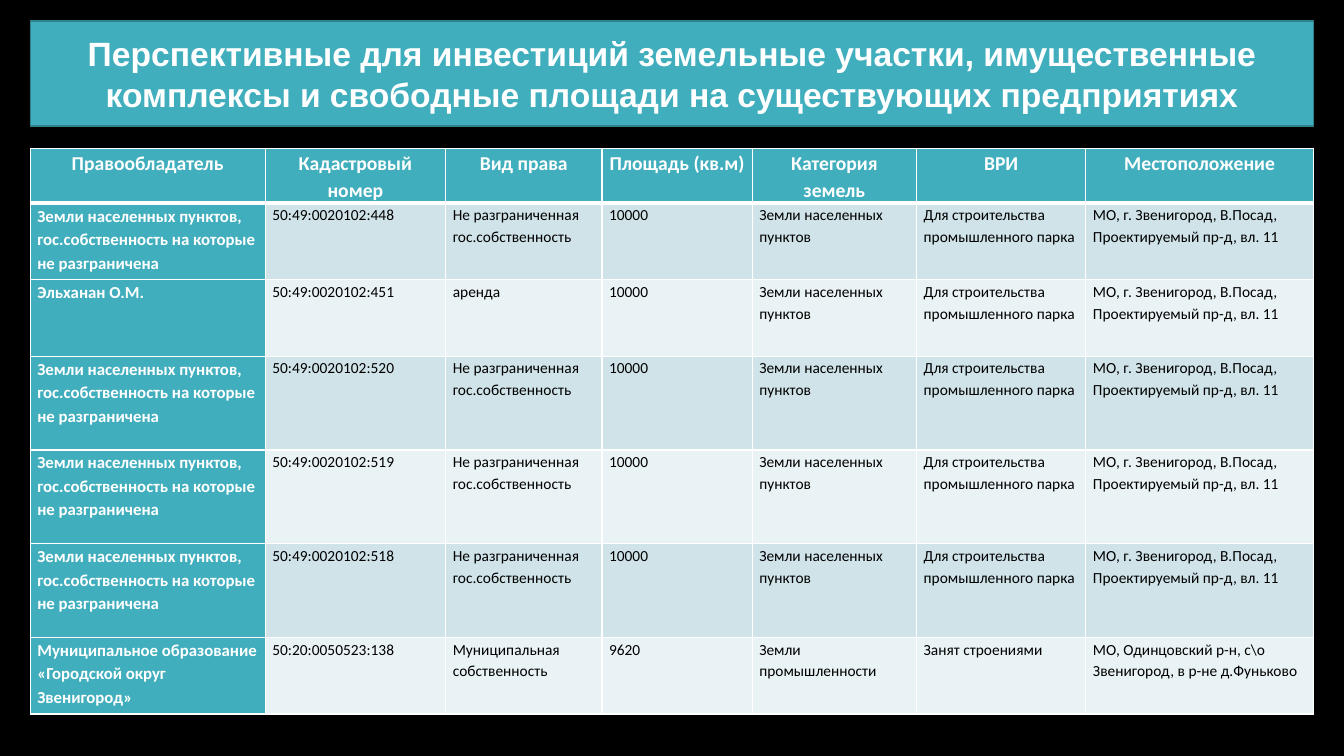
from lxml.etree import SubElement
from pptx import Presentation
from pptx.dml.color import RGBColor
from pptx.enum.shapes import MSO_SHAPE
from pptx.enum.text import MSO_ANCHOR, PP_ALIGN
from pptx.oxml.ns import qn
from pptx.util import Inches, Pt

BLACK = RGBColor(0x00, 0x00, 0x00)
WHITE = RGBColor(0xFF, 0xFF, 0xFF)
TEAL = RGBColor(0x41, 0xAE, 0xBD)
DARK_TEAL = RGBColor(0x30, 0x81, 0x8C)
BAND_DARK = RGBColor(0xCF, 0xE3, 0xE8)
BAND_LIGHT = RGBColor(0xE9, 0xF2, 0xF4)

TITLE = ("Перспективные для инвестиций земельные участки, имущественные "
         "комплексы и свободные площади на существующих предприятиях")
HEADINGS = ("Правообладатель", "Кадастровый номер", "Вид права", "Площадь (кв.м)",
            "Категория земель", "ВРИ", "Местоположение")

# Values shared by several plots
STATE_OWNER = "Земли населенных пунктов, гос.собственность на которые не разграничена"
STATE_RIGHT = "Не разграниченная гос.собственность"
PARK_PLOT = ("10000", "Земли населенных пунктов", "Для строительства промышленного парка",
             "МО, г. Звенигород, В.Посад, Проектируемый пр-д, вл. 11")
PLOTS = (
    (STATE_OWNER, "50:49:0020102:448", STATE_RIGHT, *PARK_PLOT),
    ("Эльханан О.М.", "50:49:0020102:451", "аренда", *PARK_PLOT),
    (STATE_OWNER, "50:49:0020102:520", STATE_RIGHT, *PARK_PLOT),
    (STATE_OWNER, "50:49:0020102:519", STATE_RIGHT, *PARK_PLOT),
    (STATE_OWNER, "50:49:0020102:518", STATE_RIGHT, *PARK_PLOT),
    ("Муниципальное образование «Городской округ Звенигород»", "50:20:0050523:138",
     "Муниципальная собственность", "9620", "Земли промышленности", "Занят строениями",
     "МО, Одинцовский р-н, с\\о Звенигород, в р-не д.Фуньково"),
)

# Shares of the slide, in percent of its width or height
LEFT, WIDTH = 2.25, 95.5
COLUMN_SHARES = (17.48, 13.43, 11.63, 11.18, 12.23, 12.6, 16.95)
ROW_SHARES = (6.53, 10.13, 10.13, 12.4, 12.4, 12.4, 10.13)
CELL_MARGIN = 0.53


def write(frame, text, *, size, font="Calibri", color=BLACK, bold=False,
          align=PP_ALIGN.LEFT, spacing=None):
    paragraph = frame.paragraphs[0]
    paragraph.alignment = align
    paragraph.line_spacing = spacing
    run = paragraph.add_run()
    run.text = text
    run.font.name, run.font.size = font, Pt(size)
    run.font.bold, run.font.color.rgb = bold, color


class PlotSlide:
    """Holds the slide and its style; lengths are percent shares."""

    def __init__(self, deck):
        self.deck = deck
        self.slide = deck.slides.add_slide(deck.slide_layouts[6])
        background = self.slide.background.fill
        background.solid()
        background.fore_color.rgb = BLACK

    def across(self, share):
        return round(self.deck.slide_width * share / 100)

    def down(self, share):
        return round(self.deck.slide_height * share / 100)

    def banner(self, text, top, height):
        banner = self.slide.shapes.add_shape(
            MSO_SHAPE.RECTANGLE, self.across(LEFT), self.down(top),
            self.across(WIDTH), self.down(height))
        banner.shadow.inherit = False
        banner.fill.solid()
        banner.fill.fore_color.rgb = TEAL
        banner.line.color.rgb = DARK_TEAL
        banner.line.width = Pt(1)
        banner.text_frame.word_wrap = True
        banner.text_frame.vertical_anchor = MSO_ANCHOR.MIDDLE
        write(banner.text_frame, text, size=24, font="Arial", color=WHITE,
              bold=True, align=PP_ALIGN.CENTER)

    def borders(self, cell, **widths):
        properties = cell._tc.get_or_add_tcPr()
        for side in "LRTB":
            line = SubElement(properties, qn(f"a:ln{side}"), w=str(Pt(widths.get(side, 1))))
            fill = SubElement(line, qn("a:solidFill"))
            SubElement(fill, qn("a:srgbClr"), val=str(WHITE))

    def cell(self, cell, text, row, column):
        cell.margin_left = cell.margin_right = self.across(CELL_MARGIN)
        cell.margin_top = cell.margin_bottom = 0
        # Thick rule between the headings and the first plot
        self.borders(cell, B=3 if row == 0 else 1, T=3 if row == 1 else 1)
        accent = row == 0 or column == 0
        cell.fill.solid()
        cell.fill.fore_color.rgb = TEAL if accent else BAND_DARK if row % 2 else BAND_LIGHT
        write(cell.text_frame, text, size=14 if row == 0 else 12 if accent else 11,
              color=WHITE if accent else BLACK, bold=accent, spacing=1.15,
              align=PP_ALIGN.CENTER if row == 0 else PP_ALIGN.LEFT)

    def table(self, rows, top):
        table = self.slide.shapes.add_table(
            len(rows), len(COLUMN_SHARES), self.across(LEFT), self.down(top),
            self.across(WIDTH), self.down(sum(ROW_SHARES))).table
        for column, share in zip(table.columns, COLUMN_SHARES):
            column.width = self.across(share)
        for row, share in zip(table.rows, ROW_SHARES):
            row.height = self.down(share)
        for row, values in enumerate(rows):
            for column, text in enumerate(values):
                self.cell(table.cell(row, column), text, row, column)


def main():
    deck = Presentation()
    deck.slide_width, deck.slide_height = Inches(13.33), Inches(7.5)
    plots = PlotSlide(deck)
    # Title banner
    plots.banner(TITLE, top=2.8, height=13.87)
    # Land plots
    plots.table((HEADINGS, *PLOTS), top=19.6)
    deck.save("out.pptx")


if __name__ == "__main__":
    main()
